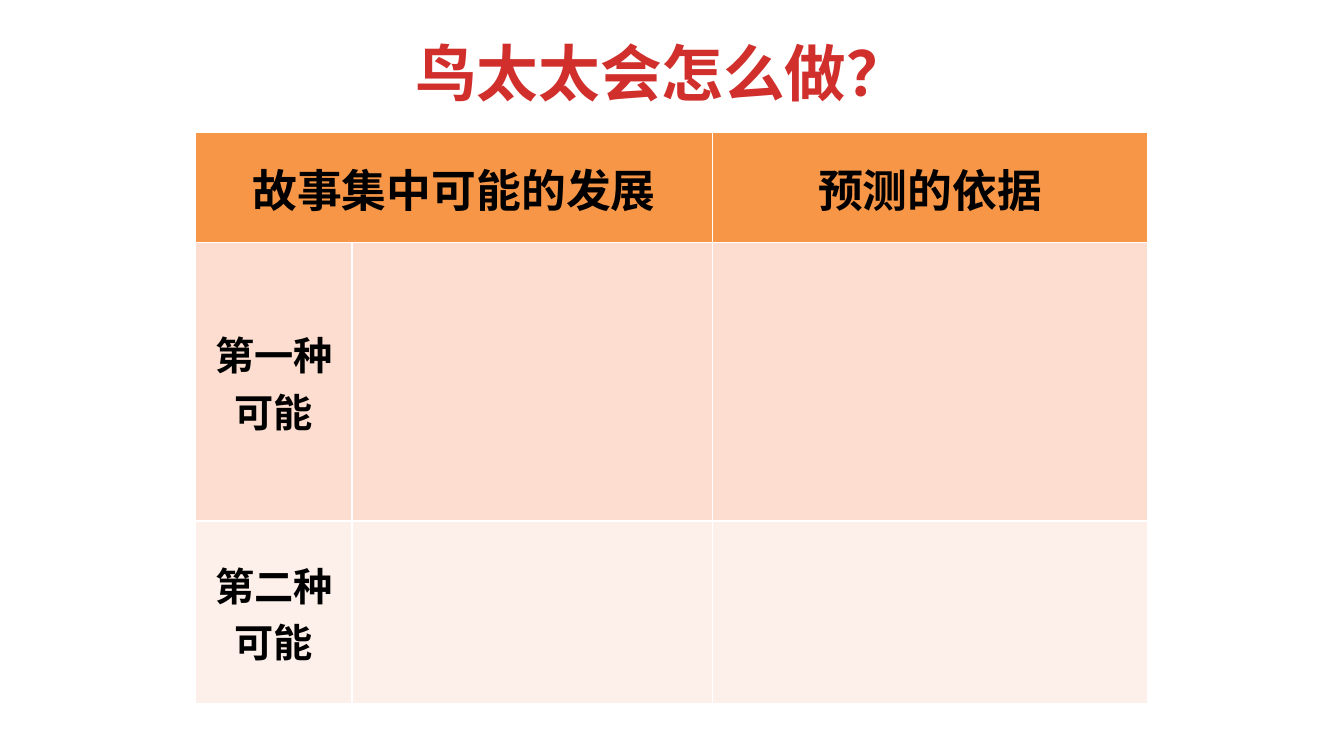
from lxml import etree
from pptx import Presentation
from pptx.dml.color import RGBColor
from pptx.enum.text import MSO_ANCHOR as Anchor, MSO_AUTO_SIZE as AutoSize, PP_ALIGN as Align
from pptx.oxml.ns import qn
from pptx.util import Cm, Pt

RED = RGBColor(0xD0, 0x2F, 0x2C)
BLACK = RGBColor(0x00, 0x00, 0x00)
ORANGE = RGBColor(0xF7, 0x96, 0x46)
PEACH = RGBColor(0xFC, 0xDD, 0xCF)
PALE_PEACH = RGBColor(0xFD, 0xEF, 0xE9)
CHINESE_FONT = "Noto Sans CJK SC"


def add_centred_run(frame, text, size, color, latin_font):
    para = frame.paragraphs[0]
    para.alignment = Align.CENTER
    run = para.add_run()
    run.text = text
    run.font.size = Pt(size)
    run.font.bold = True
    run.font.color.rgb = color
    run.font.name = latin_font
    east_asian = etree.SubElement(run.font._element, qn("a:ea"))
    east_asian.set("typeface", CHINESE_FONT)


deck = Presentation()
deck.slide_width, deck.slide_height = Cm(33.87), Cm(19.05)
page = deck.slides.add_slide(deck.slide_layouts[5])

# Title
title = page.shapes.title
title.left, title.top, title.width, title.height = Cm(10.19), Cm(0.74), Cm(12.98), Cm(2.13)
title.text_frame.word_wrap = False
title.text_frame.auto_size = AutoSize.NONE
title.text_frame.vertical_anchor = Anchor.MIDDLE
add_centred_run(title.text_frame, "鸟太太会怎么做？", 44, RED, "Calibri")

# Prediction table: the table style supplies the white borders
column_widths = [3.94, 9.09, 10.97]
rows = [
    (2.79, ORANGE, 32, ["故事集中可能的发展", "", "预测的依据"]),
    (7.01, PEACH, 28, ["第一种可能", "", ""]),
    (4.6, PALE_PEACH, 28, ["第二种可能", "", ""]),
]
table = page.shapes.add_table(
    len(rows), len(column_widths), Cm(4.93), Cm(3.33),
    Cm(sum(column_widths)), Cm(sum(row[0] for row in rows)),
).table
table.horz_banding = False
for column, width in zip(table.columns, column_widths):
    column.width = Cm(width)

for table_row, (height, fill, size, texts) in zip(table.rows, rows):
    table_row.height = Cm(height)
    for cell, text in zip(table_row.cells, texts):
        cell.fill.solid()
        cell.fill.fore_color.rgb = fill
        cell.vertical_anchor = Anchor.MIDDLE
        if text:
            add_centred_run(cell.text_frame, text, size, BLACK, CHINESE_FONT)
table.cell(0, 0).merge(table.cell(0, 1))

deck.save("out.pptx")
